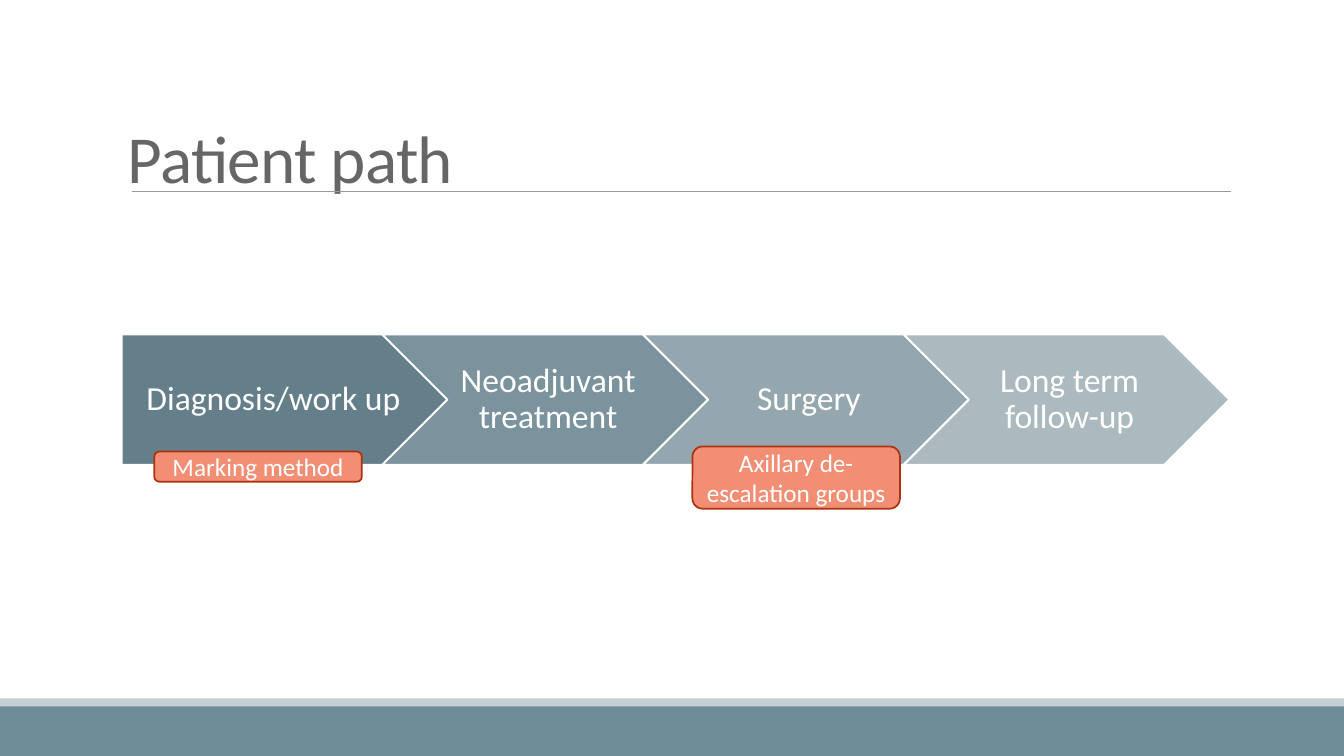
from dataclasses import dataclass

from lxml import etree
from pptx import Presentation
from pptx.dml.color import RGBColor
from pptx.enum.shapes import MSO_CONNECTOR, MSO_SHAPE
from pptx.enum.text import MSO_ANCHOR, MSO_AUTO_SIZE, PP_ALIGN
from pptx.oxml.ns import qn
from pptx.util import Cm, Pt

RECT = MSO_SHAPE.RECTANGLE
PLATE = MSO_SHAPE.PENTAGON
CHEVRON = MSO_SHAPE.CHEVRON
ROUND = MSO_SHAPE.ROUNDED_RECTANGLE
STRAIGHT = MSO_CONNECTOR.STRAIGHT
TOP = MSO_ANCHOR.TOP
MIDDLE = MSO_ANCHOR.MIDDLE
LEFT = PP_ALIGN.LEFT
CENTER = PP_ALIGN.CENTER
NO_FIT = MSO_AUTO_SIZE.NONE


@dataclass(frozen=True)
class Theme:
    font: str = "Calibri"
    white: str = "FFFFFF"
    title: str = "666666"
    rule: str = "999999"
    band: str = "6E8C98"
    strip: str = "C5D0D5"
    tag: str = "F18E74"
    edge: str = "AD3212"
    steps: tuple = ("647F8A", "7B939D", "94A6AE", "ACB9BF")
    title_size: int = 48
    step_size: int = 24
    tag_size: int = 18
    border: float = 1.25
    hair: float = 0.5


THEME = Theme()
STEPS = ("Diagnosis/work up", "Neoadjuvant treatment", "Surgery", "Long term follow-up")
TAGS = (
    ("Marking method", (3.89, 11.38, 5.23, 0.76)),
    ("Axillary de-escalation groups", (17.45, 11.25, 5.23, 1.57)),
)


def apply(target, values):
    for name, value in values.items():
        setattr(target, name, value)


def write(shape, text, size, color, align=CENTER, space=1.0, **frame):
    body = shape.text_frame
    body.text = text
    apply(body, {"word_wrap": True, "auto_size": NO_FIT, "vertical_anchor": MIDDLE} | frame)
    para = body.paragraphs[0]
    apply(para, {"alignment": align, "line_spacing": space})
    run = para.runs[0]
    apply(run.font, {"name": THEME.font, "size": Pt(size)})
    run.font.color.rgb = RGBColor.from_string(color)
    return run


def add_box(slide, kind, box, fill, edge=None):
    shape = slide.shapes.add_shape(kind, *map(Cm, box))
    shape.shadow.inherit = False
    shape.fill.solid()
    shape.fill.fore_color.rgb = RGBColor.from_string(fill)
    if edge:
        shape.line.color.rgb = RGBColor.from_string(edge)
        shape.line.width = Pt(THEME.border)
    else:
        shape.line.fill.background()
    return shape


def add_rule(slide, left, right, top):
    rule = slide.shapes.add_connector(STRAIGHT, Cm(left), Cm(top), Cm(right), Cm(top))
    rule.line.color.rgb = RGBColor.from_string(THEME.rule)
    rule.line.width = Pt(THEME.hair)
    etree.SubElement(rule._element.spPr, qn("a:effectLst"))


def add_title(slide, text):
    title = slide.shapes.title
    apply(title, {"left": Cm(2.97), "top": Cm(3.12), "width": Cm(27.94), "height": Cm(4.04)})
    run = write(title, text, THEME.title_size, THEME.title, LEFT, 0.85, vertical_anchor=TOP)
    run._r.get_or_add_rPr().set("spc", "-50")


def add_steps(slide):
    for i, (text, fill) in enumerate(zip(STEPS, THEME.steps)):
        kind = CHEVRON if i else PLATE
        step = add_box(slide, kind, (3.07 + i * 6.57, 8.46 - 0.03, 8.2, 3.28), fill, THEME.white)
        write(step, text, THEME.step_size, THEME.white, space=0.9,
              margin_left=Cm(0.25 if i else 0.36), margin_right=Cm(0.1),
              margin_top=Cm(0.18), margin_bottom=Cm(0.18))


def add_tags(slide):
    for text, box in TAGS:
        tag = add_box(slide, ROUND, box, THEME.tag, THEME.edge)
        write(tag, text, THEME.tag_size, THEME.white)


def main():
    deck = Presentation()
    apply(deck, {"slide_width": Cm(33.87), "slide_height": Cm(19.05)})
    slide = deck.slides.add_slide(deck.slide_layouts[5])
    add_title(slide, "Patient path")
    add_box(slide, RECT, (0, 17.78, 33.87, 1.27), THEME.band)
    add_box(slide, RECT, (0, 17.6, 33.87, 0.2), THEME.strip)
    add_rule(slide, 3.33, 31.01, 4.83)
    add_steps(slide)
    add_tags(slide)
    deck.save("out.pptx")


if __name__ == "__main__":
    main()
